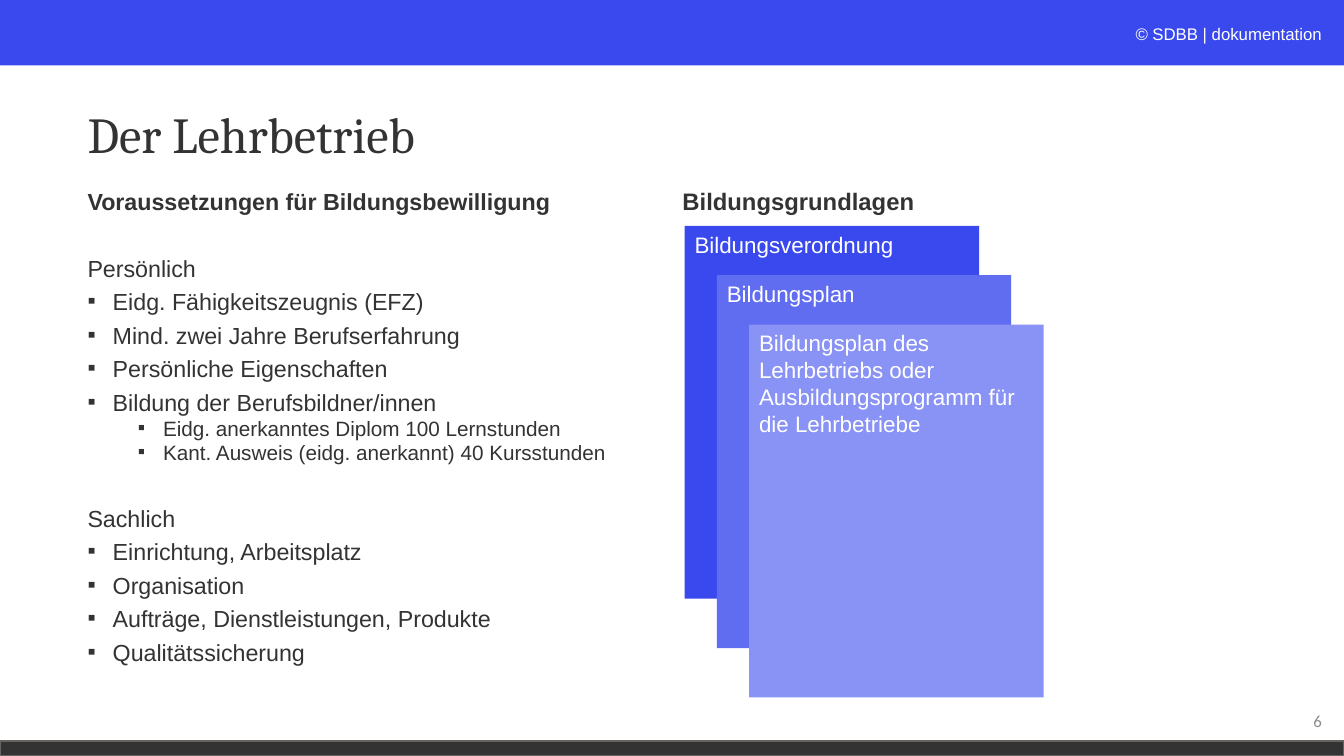
from dataclasses import dataclass

from lxml.etree import SubElement
from pptx import Presentation
from pptx.dml.color import RGBColor
from pptx.enum.shapes import MSO_SHAPE
from pptx.enum.text import MSO_ANCHOR, MSO_AUTO_SIZE, PP_ALIGN
from pptx.oxml.ns import qn
from pptx.util import Inches, Pt


@dataclass(frozen=True)
class Theme:
    blue: str = "3A49EE"
    mid: str = "616DF1"
    light: str = "8992F5"
    dark: str = "333333"
    edge: str = "666360"
    gray: str = "8C8C8C"
    white: str = "FFFFFF"
    sans: str = "Arial"
    serif: str = "Cambria"
    plain: str = "Calibri"
    title: float = 36
    head: float = 17
    body: float = 16.6
    sub: float = 14.8
    card: float = 16
    small: float = 12


class Deck:
    def __init__(self, theme):
        self.theme = theme
        self.file = Presentation()
        self.file.slide_width = Inches(13.33)
        self.file.slide_height = Inches(7.5)
        self.slide = self.file.slides.add_slide(self.file.slide_layouts[5])

    def run(self, para, text, size, color, font=None, bold=False, italic=False):
        run = para.add_run()
        run.text = text
        run.font.size = Pt(size)
        run.font.name = font or self.theme.sans
        run.font.bold = bold
        run.font.italic = italic
        run.font.color.rgb = RGBColor.from_string(color)

    def title(self, text, x, y, w, h):
        shape = self.slide.shapes.title
        shape.left, shape.top = Inches(x), Inches(y)
        shape.width, shape.height = Inches(w), Inches(h)
        frame = shape.text_frame
        frame.word_wrap = True
        frame.auto_size = MSO_AUTO_SIZE.NONE
        frame.vertical_anchor = MSO_ANCHOR.MIDDLE
        para = frame.paragraphs[0]
        para.alignment = PP_ALIGN.LEFT
        para.line_spacing = 0.9
        self.run(para, text, self.theme.title, self.theme.dark, self.theme.serif)

    def rect(self, x, y, w, h, fill, line=None):
        shape = self.slide.shapes.add_shape(
            MSO_SHAPE.RECTANGLE, Inches(x), Inches(y), Inches(w), Inches(h))
        shape.shadow.inherit = False
        shape.fill.solid()
        shape.fill.fore_color.rgb = RGBColor.from_string(fill)
        if line:
            shape.line.color.rgb = RGBColor.from_string(line)
            shape.line.width = Pt(1)
        else:
            shape.line.fill.background()
        return shape

    def card(self, text, x, y, w, h, fill):
        frame = self.rect(x, y, w, h, fill).text_frame
        frame.word_wrap = True
        frame.vertical_anchor = MSO_ANCHOR.TOP
        para = frame.paragraphs[0]
        para.alignment = PP_ALIGN.LEFT
        self.run(para, text, self.theme.card, self.theme.white)

    def box(self, x, y, w, h, align=PP_ALIGN.LEFT, anchor=MSO_ANCHOR.TOP):
        """Add a wrapped text box and return its frame."""
        shape = self.slide.shapes.add_textbox(
            Inches(x), Inches(y), Inches(w), Inches(h))
        frame = shape.text_frame
        frame.word_wrap = True
        frame.vertical_anchor = anchor
        frame.paragraphs[0].alignment = align
        return frame

    def bullet(self, para, indent):
        props = para._p.get_or_add_pPr()
        props.set("marL", str(Inches(indent)))
        props.set("indent", str(-Inches(0.25)))
        SubElement(props, qn("a:buFont")).set("typeface", self.theme.sans)
        SubElement(props, qn("a:buChar")).set("char", "▪")

    def outline(self, rows, x, y, w, h):
        """Add rows of (kind, text), where kind is head, group, item or sub."""
        frame = self.box(x, y, w, h)
        gaps = {"group": 34, "item": 10, "sub": 5}
        indents = {"item": 0.25, "sub": 0.75}
        for i, (kind, text) in enumerate(rows):
            para = frame.add_paragraph() if i else frame.paragraphs[0]
            if kind in indents:
                self.bullet(para, indents[kind])
            para.level = 1 if kind == "sub" else 0
            para.line_spacing = 0.7
            para.space_before = Pt(gaps[kind] if i else 0)
            size = self.theme.sub if kind == "sub" else self.theme.body
            self.run(para, text, size, self.theme.dark, bold=kind == "head")


ROWS = [
    ("head", "Voraussetzungen für Bildungsbewilligung"),
    ("group", "Persönlich"),
    ("item", "Eidg. Fähigkeitszeugnis (EFZ)"),
    ("item", "Mind. zwei Jahre Berufserfahrung"),
    ("item", "Persönliche Eigenschaften"),
    ("item", "Bildung der Berufsbildner/innen"),
    ("sub", "Eidg. anerkanntes Diplom 100 Lernstunden"),
    ("sub", "Kant. Ausweis (eidg. anerkannt) 40 Kursstunden"),
    ("group", "Sachlich"),
    ("item", "Einrichtung, Arbeitsplatz"),
    ("item", "Organisation"),
    ("item", "Aufträge, Dienstleistungen, Produkte"),
    ("item", "Qualitätssicherung"),
]


def main():
    theme = Theme()
    deck = Deck(theme)
    deck.rect(0, 0, 13.33, 0.65, theme.blue)
    deck.rect(0, 7.35, 13.33, 0.15, theme.dark, theme.edge)

    credit = deck.box(8.62, 0.19, 4.59, 0.3, PP_ALIGN.RIGHT).paragraphs[0]
    deck.run(credit, "© ", theme.small, theme.white, italic=True)
    deck.run(credit, "SDBB | dokumentation", theme.small, theme.white)

    deck.title("Der Lehrbetrieb", 0.77, 0.64, 8.82, 1.45)
    deck.outline(ROWS, 0.77, 1.88, 5.43, 5)

    head = deck.box(6.67, 1.84, 4.31, 0.54).paragraphs[0]
    head.line_spacing = 0.9
    deck.run(head, "Bildungsgrundlagen", theme.head, theme.dark, bold=True)

    cards = [
        ("Bildungsverordnung", theme.blue),
        ("Bildungsplan", theme.mid),
        ("Bildungsplan des Lehrbetriebs oder Ausbildungsprogramm "
         "für die Lehrbetriebe", theme.light),
    ]
    for i, (text, fill) in enumerate(cards):
        deck.card(text, 6.79 + 0.32 * i, 2.24 + 0.49 * i, 2.92, 3.7, fill)

    page = deck.box(10.21, 6.95, 3, 0.4, PP_ALIGN.RIGHT, MSO_ANCHOR.MIDDLE)
    deck.run(page.paragraphs[0], "6", theme.small, theme.gray, theme.plain)
    deck.file.save("out.pptx")


if __name__ == "__main__":
    main()
